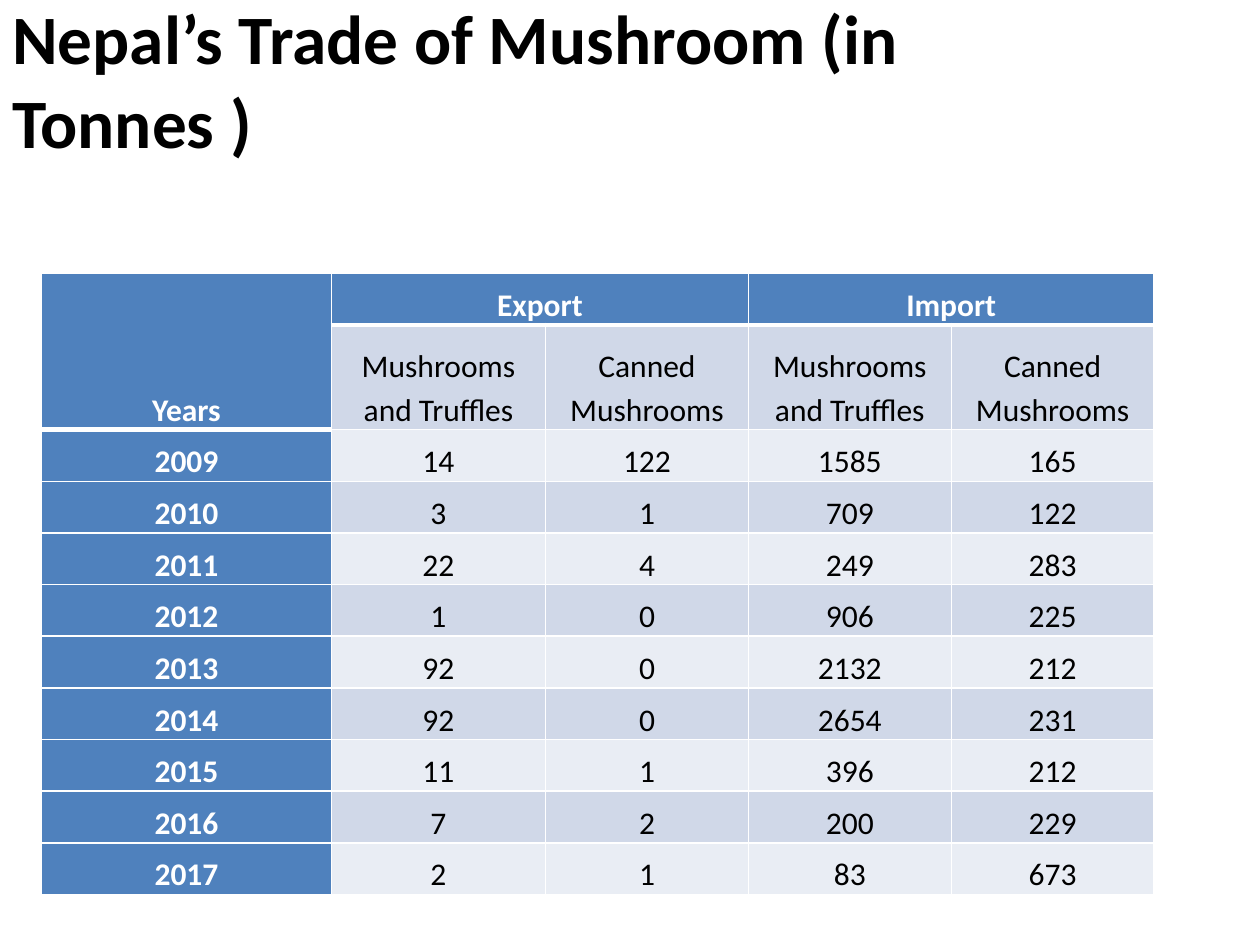
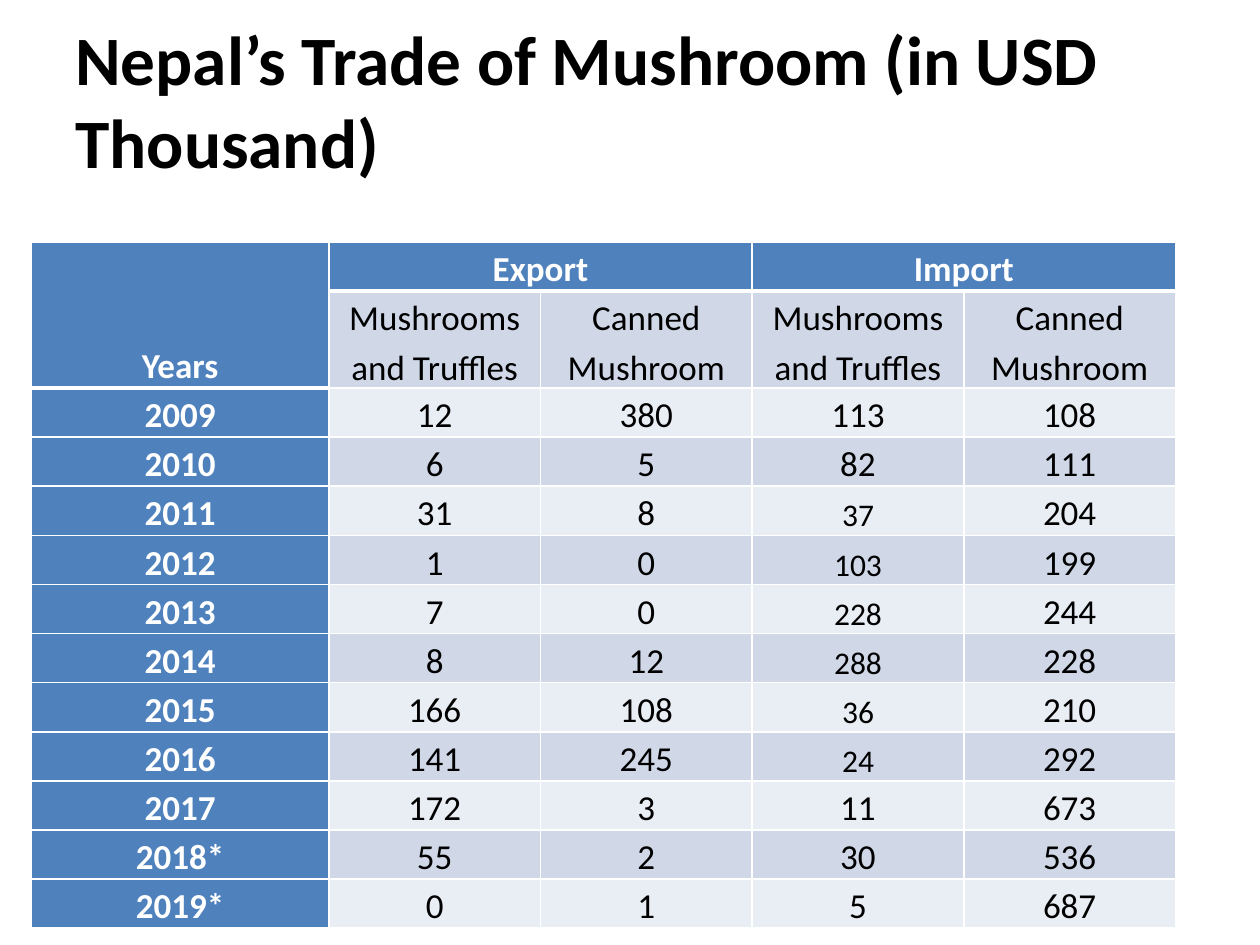
from pptx import Presentation
from pptx.dml.color import RGBColor
from pptx.enum.text import MSO_ANCHOR, PP_ALIGN
from pptx.oxml.ns import qn
from pptx.util import Inches, Pt
from lxml import etree

MIDDLE, BOTTOM, CENTER = MSO_ANCHOR.MIDDLE, MSO_ANCHOR.BOTTOM, PP_ALIGN.CENTER
FONT, BLACK, WHITE = "Calibri", "000000", "FFFFFF"
HEAD, BAND_DARK, BAND_LIGHT = "4F81BD", "D0D8E8", "E9EDF4"

SLIDES = [
    {
        "title": "Nepal’s Trade of Mushroom (in Tonnes )",
        "title_at": (0, 0), "title_insets": {"margin_right": 0.3},
        "products": ["Mushrooms and Truffles", "Canned Mushrooms"],
        "table_at": (0.33, 2.17), "cols": [2.3, 1.7, 1.61, 1.61, 1.61],
        "row": 0.41, "subhead": 0.83, "size": 18, "small": [],
        "years": [
            ("2009", 14, 122, 1585, 165),
            ("2010", 3, 1, 709, 122),
            ("2011", 22, 4, 249, 283),
            ("2012", 1, 0, 906, 225),
            ("2013", 92, 0, 2132, 212),
            ("2014", 92, 0, 2654, 231),
            ("2015", 11, 1, 396, 212),
            ("2016", 7, 2, 200, 229),
            ("2017", 2, 1, 83, 673),
        ],
    },
    {
        "title": "Nepal’s Trade of Mushroom (in USD Thousand)",
        "title_at": (0.5, 0.5), "title_insets": {"margin_bottom": 0.72},
        "products": ["Mushrooms and Truffles", "Canned Mushroom"],
        "table_at": (0.25, 1.92), "cols": [2.36] + [1.68] * 4,
        "row": 0.39, "subhead": 0.77, "size": 20,
        "small": ["2011", "2012", "2013", "2014", "2015", "2016"],
        "years": [
            ("2009", 12, 380, 113, 108),
            ("2010", 6, 5, 82, 111),
            ("2011", 31, 8, 37, 204),
            ("2012", 1, 0, 103, 199),
            ("2013", 7, 0, 228, 244),
            ("2014", 8, 12, 288, 228),
            ("2015", 166, 108, 36, 210),
            ("2016", 141, 245, 24, 292),
            ("2017", 172, 3, 11, 673),
            ("2018*", 55, 2, 30, 536),
            ("2019*", 0, 1, 5, 687),
        ],
    },
]
TITLE_SIZE, SMALL_SIZE, IMPORT_COL = 39.6, 18, 3


def rgb(value):
    return RGBColor.from_string(value)


def set_all(obj, values):
    for name, value in values.items():
        setattr(obj, name, value)


def write(p, text, size, color, bold):
    r = p.add_run()
    r.text = str(text)
    set_all(r.font, {"name": FONT, "size": Pt(size), "bold": bold})
    r.font.color.rgb = rgb(color)


def add_title(s, spec_):
    box = s.shapes.add_textbox(*map(Inches, (*spec_["title_at"], 9, 1.25)))
    tf = box.text_frame
    set_all(tf, {"word_wrap": True, "vertical_anchor": MIDDLE})
    set_all(tf, {k: Inches(v) for k, v in spec_["title_insets"].items()})
    write(tf.paragraphs[0], spec_["title"], TITLE_SIZE, BLACK, True)


def set_borders(cell, bottom):
    tcPr = cell._tc.get_or_add_tcPr()
    for side, width in {"L": 1, "R": 1, "T": 1, "B": bottom}.items():
        ln = etree.SubElement(tcPr, qn("a:ln" + side), w=str(Pt(width)))
        fill = etree.SubElement(ln, qn("a:solidFill"))
        etree.SubElement(fill, qn("a:srgbClr"), val=WHITE)


def add_trade_table(s, data):
    rows = [("Years", "Export", "", "Import", ""), ("", *data["products"] * 2), *data["years"]]
    heights = [data["row"], data["subhead"]] + [data["row"]] * len(data["years"])
    size = (sum(data["cols"]), sum(heights))
    table = s.shapes.add_table(len(rows), len(data["cols"]),
                               *map(Inches, (*data["table_at"], *size))).table
    for col, width in zip(table.columns, data["cols"]):
        col.width = Inches(width)
    for row, height in zip(table.rows, heights):
        row.height = Inches(height)
    for start, end in [((0, 0), (1, 0)), ((0, 1), (0, 2)), ((0, 3), (0, 4))]:
        table.cell(*start).merge(table.cell(*end))

    for i, values in enumerate(rows):
        for j, value in enumerate(values):
            cell = table.cell(i, j)
            head = i == 0 or j == 0
            set_borders(cell, 3 if i == 0 or (i, j) == (1, 0) else 1)
            cell.fill.solid()
            cell.fill.fore_color.rgb = rgb(HEAD if head else BAND_DARK if i % 2 else BAND_LIGHT)
            set_all(cell, {"vertical_anchor": BOTTOM, "margin_left": Inches(0.07),
                           "margin_right": Inches(0.07), "margin_top": 0, "margin_bottom": 0})
            if value == "":
                continue
            p = cell.text_frame.paragraphs[0]
            set_all(p, {"alignment": CENTER, "line_spacing": 1.15})
            small = j == IMPORT_COL and values[0] in data["small"]
            write(p, value, SMALL_SIZE if small else data["size"], WHITE if head else BLACK, head)


def main():
    """Build the two mushroom trade slides."""
    prs = Presentation()
    prs.slide_width, prs.slide_height = Inches(10), Inches(7.5)
    for data in SLIDES:
        s = prs.slides.add_slide(prs.slide_layouts[6])
        add_title(s, data)
        add_trade_table(s, data)
    prs.save("out.pptx")


if __name__ == "__main__":
    main()
